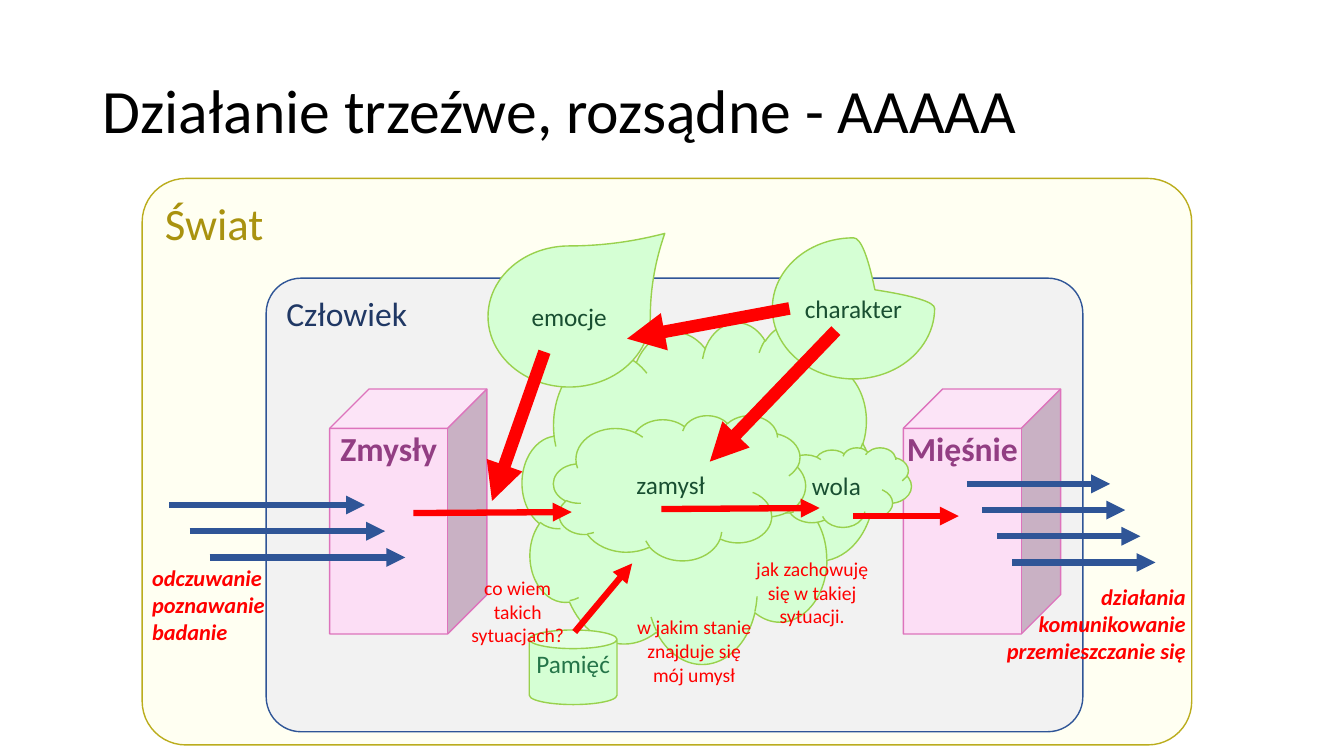
from lxml import etree
from pptx import Presentation
from pptx.dml.color import RGBColor
from pptx.enum.shapes import MSO_CONNECTOR, MSO_SHAPE
from pptx.enum.text import MSO_ANCHOR, MSO_AUTO_SIZE, PP_ALIGN
from pptx.oxml.ns import qn
from pptx.util import Emu, Pt

ROUNDED, CUBE, CAN = MSO_SHAPE.ROUNDED_RECTANGLE, MSO_SHAPE.CUBE, MSO_SHAPE.CAN
CLOUD, TEAR = MSO_SHAPE.CLOUD, MSO_SHAPE.TEAR
STRAIGHT = MSO_CONNECTOR.STRAIGHT
LEFT, CENTER, RIGHT = PP_ALIGN.LEFT, PP_ALIGN.CENTER, PP_ALIGN.RIGHT
TOP, MIDDLE = MSO_ANCHOR.TOP, MSO_ANCHOR.MIDDLE
GROW = MSO_AUTO_SIZE.SHAPE_TO_FIT_TEXT

FONT = "Calibri"
RED, BLUE = "FF0000", "2F5597"
GREEN_FILL, GREEN_LINE, GREEN_TEXT = "D5FFD4", "99D14D", "194F31"


def px(n):
    """Length on a scale of 100 px to the inch."""
    return Emu(n * 9144)


def rgb(color):
    return RGBColor.from_string(color)


def write(sp, text, size, color, align=LEFT, anchor=TOP, bold=False,
          italic=False, inset=True, spacing=None):
    tf = sp.text_frame
    tf.word_wrap = True
    tf.vertical_anchor = anchor
    if not inset:
        tf.margin_left = tf.margin_right = tf.margin_top = tf.margin_bottom = 0
    for i, line in enumerate(text.split("\n")):
        p = tf.add_paragraph() if i else tf.paragraphs[0]
        p.alignment = align
        p.line_spacing = spacing
        r = p.add_run()
        r.text = line
        r.font.name, r.font.size = FONT, Pt(size)
        r.font.bold, r.font.italic = bold, italic
        r.font.color.rgb = rgb(color)


def add_text(s, x, y, w, h, text, size, color, grow=True, **fmt):
    sp = s.shapes.add_textbox(px(x), px(y), px(w), px(h))
    write(sp, text, size, color, **fmt)
    if grow:
        sp.text_frame.auto_size = GROW


def add_shape(s, kind, x, y, w, h, fill, line, adj=None):
    sp = s.shapes.add_shape(kind, px(x), px(y), px(w), px(h))
    sp.shadow.inherit = False
    sp.fill.solid()
    sp.fill.fore_color.rgb = rgb(fill)
    sp.line.color.rgb = rgb(line)
    sp.line.width = Pt(1)
    if adj is not None:
        sp.adjustments[0] = adj
    return sp


def arrow(s, x1, y1, x2, y2, color=RED, width=4.5):
    c = s.shapes.add_connector(STRAIGHT, px(x1), px(y1), px(x2), px(y2))
    c.line.color.rgb = rgb(color)
    c.line.width = Pt(width)
    etree.SubElement(c.line._get_or_add_ln(), qn("a:tailEnd"), type="triangle")
    etree.SubElement(c._element.spPr, qn("a:effectLst"))


def arrow_stack(s, x, y, length, count, step_x, step_y=26):
    for i in range(count):
        left, top = x + i * step_x, y + i * step_y
        arrow(s, left, top, left + length, top, BLUE)


def panel(s, x, y, w, h, text, size, color, fill, line):
    sp = add_shape(s, ROUNDED, x, y, w, h, fill, line, 0.077)
    write(sp, text, size, color)


def body_part(s, x, y, text):
    sp = add_shape(s, CUBE, x, y, 156, 243, "FCDEF5", "DD73BC")
    write(sp, text, 24, "923E83", align=CENTER, bold=True, inset=False)


def green(s, kind, x, y, w, h, text=None, color=GREEN_TEXT, anchor=MIDDLE, adj=None):
    sp = add_shape(s, kind, x, y, w, h, GREEN_FILL, GREEN_LINE, adj)
    if text:
        write(sp, text, 18, color, align=CENTER, anchor=anchor, inset=False)


def world(s, x, y, w, h):
    """The world, the human in it, and what passes between them."""
    panel(s, x, y, w, h, "Świat", 32, "A9920F", "FFFFF2", "BBAD1D")
    panel(s, x + 123, y + 99, 810, 450, "Człowiek", 24, "203864", "F2F2F2", BLUE)
    body_part(s, x + 755, y + 209, "Mięśnie")
    body_part(s, x + 186, y + 209, "Zmysły")
    arrow_stack(s, x + 818, y + 303, 142, 4, 15)
    arrow_stack(s, x + 27, y + 324, 194, 3, 20)
    outer = dict(size=16, color=RED, bold=True, italic=True)
    add_text(s, x, y + 378, 231, 91, "odczuwanie\npoznawanie\nbadanie", **outer)
    add_text(s, x + 747, y + 397, 298, 91,
             "działania\nkomunikowanie\nprzemieszczanie się", align=RIGHT, **outer)


def mind(s, x, y):
    """Clouds, memory, emotions and character, joined by red arrows."""
    green(s, CLOUD, x + 73, y + 83, 349, 339)
    green(s, CLOUD, x + 320, y + 208, 139, 79, "wola")
    green(s, CLOUD, x + 104, y + 176, 250, 144, "zamysł")
    green(s, CAN, x + 80, y + 389, 87, 74, "Pamięć", "257549", TOP)
    for x1, y1, x2, y2 in [(-35, 273, 122, 272), (211, 269, 368, 268),
                           (401, 276, 506, 276), (125, 391, 182, 323)]:
        arrow(s, x + x1, y + y1, x + x2, y + y2)
    for dx, dy, text in [(175, 369, "w jakim stanie znajduje się mój umysł"),
                         (292, 311, "jak zachowuję się w takiej sytuacji."),
                         (0, 330, "co wiem takich sytuacjach?")]:
        add_text(s, x + dx, y + dy, 137, 81, text, 14, RED, align=CENTER, anchor=MIDDLE)
    green(s, TEAR, x + 321, y, 161, 140, "charakter", adj=0.264)
    green(s, TEAR, x + 39, y + 8, 161, 140, "emocje", adj=1.178)
    for x1, y1, x2, y2 in [(384, 92, 259, 222), (338, 70, 177, 100), (95, 113, 43, 261)]:
        arrow(s, x + x1, y + y1, x + x2, y + y2, width=9)


def main():
    prs = Presentation()
    prs.slide_width, prs.slide_height = px(1333), px(750)
    s = prs.slides.add_slide(prs.slide_layouts[6])
    add_text(s, 92, 40, 1150, 145, "Działanie trzeźwe, rozsądne - AAAAA", 44, "000000",
             grow=False, anchor=MIDDLE, spacing=0.9)
    world(s, 141, 177, 1041, 562)
    mind(s, 445, 236)
    prs.save("out.pptx")


if __name__ == "__main__":
    main()
